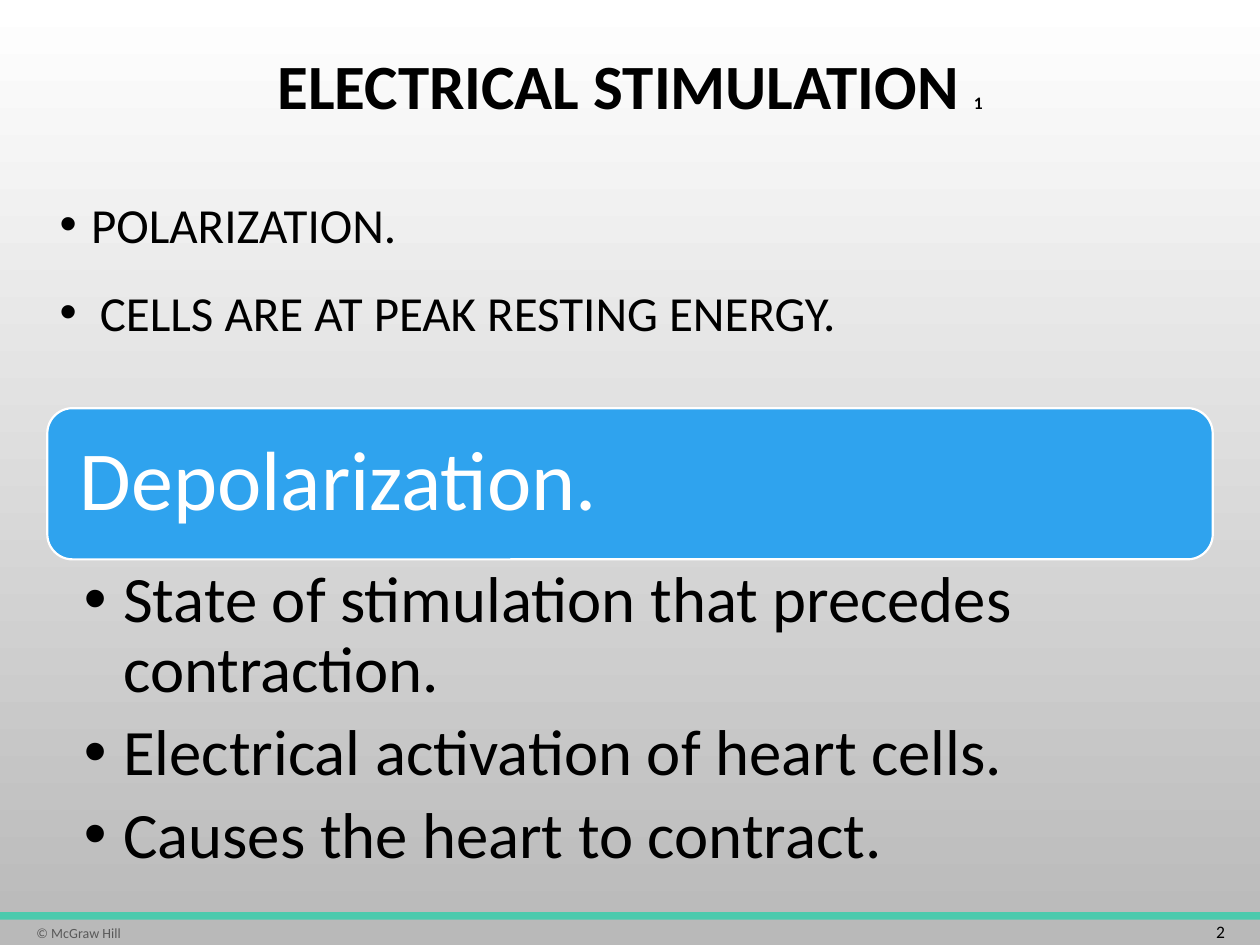
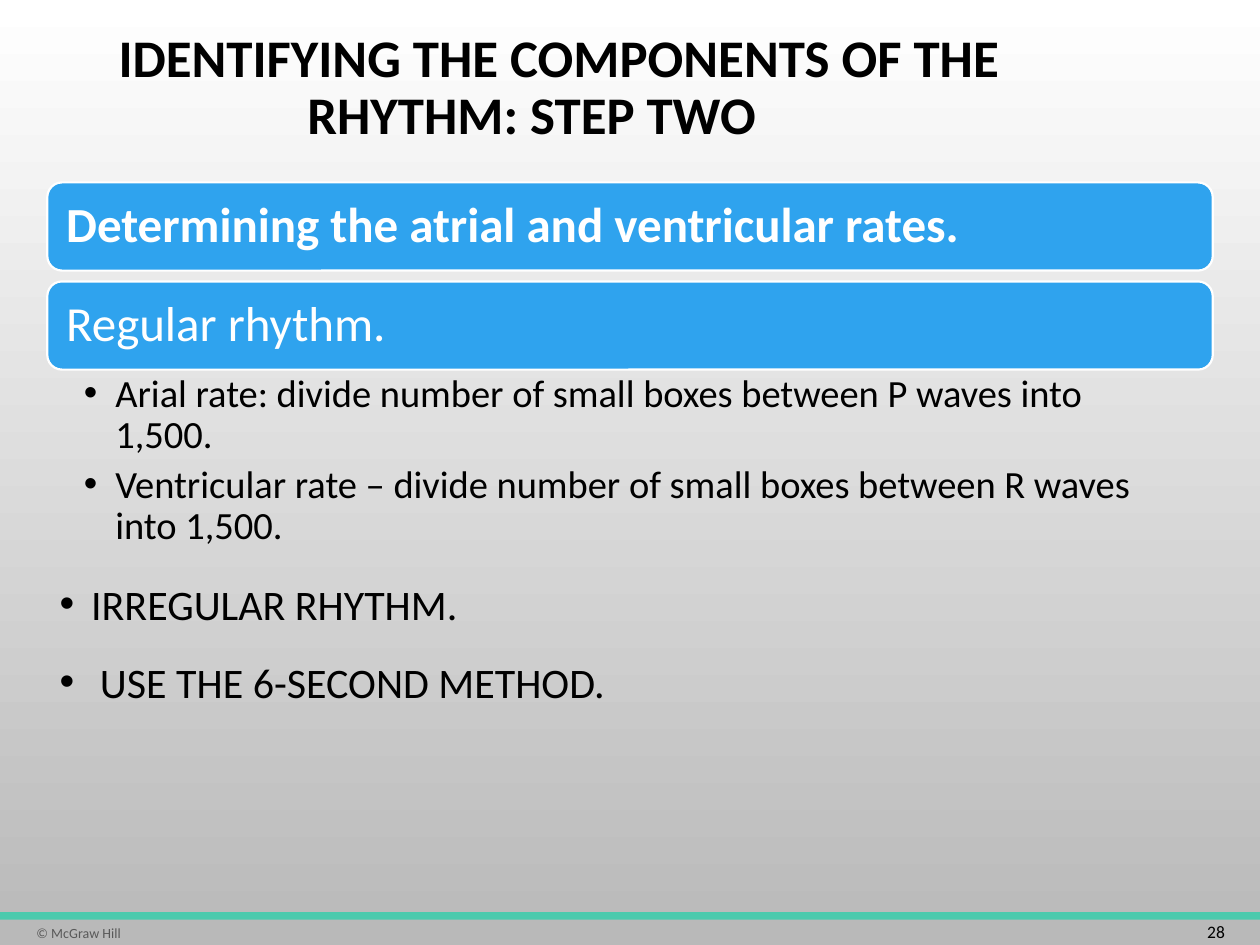
from lxml import etree
from pptx import Presentation
from pptx.dml.color import RGBColor
from pptx.enum.shapes import MSO_SHAPE
from pptx.enum.text import MSO_ANCHOR, PP_ALIGN
from pptx.oxml.ns import qn
from pptx.util import Pt

RECTANGLE = MSO_SHAPE.RECTANGLE
ROUNDED_RECTANGLE = MSO_SHAPE.ROUNDED_RECTANGLE
TOP, MIDDLE = MSO_ANCHOR.TOP, MSO_ANCHOR.MIDDLE
LEFT, CENTER, RIGHT = PP_ALIGN.LEFT, PP_ALIGN.CENTER, PP_ALIGN.RIGHT

COLORS = {
    "background_top": "FFFFFF",
    "background_bottom": "B9B9B9",
    "band": "4BCAAD",
    "panel": "2FA3EE",
    "panel_text": "FFFFFF",
    "text": "000000",
    "footer": "595959",
}
FONT = "Calibri"
MARGIN = 27
CONTENT_WIDTH = 666
DEFAULT_INSETS = (7.2, 3.6, 7.2, 3.6)


def write_text(shape, paragraphs, size, color="text", bold=False, align=LEFT,
               anchor=TOP, insets=DEFAULT_INSETS, line_spacing=1.0,
               space_before=0, space_after=0, indents=()):
    """Fill a shape with paragraphs, each a list of (text, size) runs or a string."""
    frame = shape.text_frame
    frame_format = {"word_wrap": True, "vertical_anchor": anchor}
    for side, inset in zip(("left", "top", "right", "bottom"), insets):
        frame_format[f"margin_{side}"] = Pt(inset)
    for name, value in frame_format.items():
        setattr(frame, name, value)

    for index, runs in enumerate(paragraphs):
        paragraph = frame.add_paragraph() if index else frame.paragraphs[0]
        paragraph_format = {
            "alignment": align,
            "line_spacing": line_spacing,
            "space_before": Pt(space_before if index else 0),
            "space_after": Pt(space_after),
        }
        for name, value in paragraph_format.items():
            setattr(paragraph, name, value)
        if indents:
            properties = paragraph._p.get_or_add_pPr()
            properties.set("marL", str(Pt(indents[index])))
            properties.set("indent", str(-Pt(indents[index])))
            etree.SubElement(properties, qn("a:buFont"), typeface="Arial")
            etree.SubElement(properties, qn("a:buChar"), char="•")
        if isinstance(runs, str):
            runs = [(runs, size)]
        for text, run_size in runs:
            run = paragraph.add_run()
            run.text = text
            run_format = {"name": FONT, "size": Pt(run_size), "bold": bold}
            for name, value in run_format.items():
                setattr(run.font, name, value)
            run.font.color.rgb = RGBColor.from_string(COLORS[color])


def add_filled_shape(slide, kind, box, fill, line=None):
    shape = slide.shapes.add_shape(kind, *map(Pt, box))
    shape.shadow.inherit = False
    shape.fill.solid()
    shape.fill.fore_color.rgb = RGBColor.from_string(COLORS[fill])
    if line:
        shape.line.color.rgb = RGBColor.from_string(COLORS[line])
        shape.line.width = Pt(1.25)
    else:
        shape.line.fill.background()
    return shape


SLIDES = [
    {
        "number": "2",
        "title": [("ELECTRICAL STIMULATION ", 36), ("1", 10)],
        "title_width": CONTENT_WIDTH,
        "body": ["POLARIZATION.", "CELLS ARE AT PEAK RESTING ENERGY."],
        "body_size": 28,
        "body_top": 100.8,
        "body_height": 111,
        "panels": [("Depolarization.", False)],
        "panel_size": 48,
        "panel_top": 233.25,
        "panel_height": 86.4,
        "panel_inset": 14.4,
        "details": [
            "State of stimulation that precedes contraction.",
            "Electrical activation of heart cells.",
            "Causes the heart to contract.",
        ],
        "detail_size": 37,
        "detail_top": 319,
        "detail_height": 172,
        "detail_insets": (20.9, 5, 26.6, 5),
        "detail_indent": 22.5,
    },
    {
        "number": "28",
        "title": [("IDENTIFYING THE COMPONENTS OF THE RHYTHM: STEP TWO\t", 30.2)],
        "title_width": 585.4,
        "body": ["IRREGULAR RHYTHM.", "USE THE 6-SECOND METHOD."],
        "body_size": 24,
        "body_top": 321,
        "body_height": 171,
        "panels": [
            ("Determining the atrial and ventricular rates.", True),
            ("Regular rhythm.", False),
        ],
        "panel_size": 28,
        "panel_top": 104.25,
        "panel_height": 50.4,
        "panel_inset": 8.4,
        "details": [
            "Arial rate: divide number of small boxes between P waves into 1,500.",
            "Ventricular rate – divide number of small boxes between R waves into 1,500.",
        ],
        "detail_size": 22,
        "detail_top": 211,
        "detail_height": 98,
        "detail_insets": (20.9, 2.8, 15.8, 2.8),
        "detail_indent": 18,
    },
]
PANEL_GAP = 6.2

presentation = Presentation()
presentation.slide_width, presentation.slide_height = Pt(720), Pt(540)
blank_layout = presentation.slide_layouts[6]

for content in SLIDES:
    slide = presentation.slides.add_slide(blank_layout)
    add_textbox = slide.shapes.add_textbox

    # Background gradient, running from top to bottom
    background = slide.background.fill
    background.gradient()
    background.gradient_angle = 270
    for stop, position, color in zip(background.gradient_stops, (0, 1),
                                     ("background_top", "background_bottom")):
        stop.position = position
        stop.color.rgb = RGBColor.from_string(COLORS[color])

    # Footer band, copyright line and slide number
    add_filled_shape(slide, RECTANGLE, (0, 521.3, 720, 4.3), "band")
    copyright_line = add_textbox(*map(Pt, (17.2, 525, 97, 16.5)))
    write_text(copyright_line, ["© McGraw Hill"], 8, "footer", anchor=MIDDLE,
               insets=(3.6,) * 4)
    slide_number = add_textbox(*map(Pt, (679, 525.6, 28, 13)))
    write_text(slide_number, [content["number"]], 10, align=RIGHT, anchor=MIDDLE)

    # Title
    title = add_textbox(*map(Pt, (MARGIN, 15, content["title_width"], 71.3)))
    write_text(title, [content["title"]], 36, bold=True, align=CENTER,
               anchor=MIDDLE, line_spacing=0.9)

    # Capitalised bullets
    body = add_textbox(*map(Pt, (MARGIN, content["body_top"], CONTENT_WIDTH,
                                 content["body_height"])))
    write_text(body, content["body"], content["body_size"], line_spacing=1.2,
               space_before=10, indents=(18, 23))

    # Blue heading panels
    for index, (heading, bold) in enumerate(content["panels"]):
        panel_top = content["panel_top"] + index * (content["panel_height"] + PANEL_GAP)
        panel = add_filled_shape(
            slide, ROUNDED_RECTANGLE,
            (MARGIN, panel_top, CONTENT_WIDTH, content["panel_height"]),
            "panel", "panel_text")
        write_text(panel, [heading], content["panel_size"], "panel_text", bold,
                   anchor=MIDDLE, insets=(content["panel_inset"],) * 4,
                   line_spacing=0.9)

    # Detail bullets under the last panel
    details = add_textbox(*map(Pt, (MARGIN, content["detail_top"], CONTENT_WIDTH,
                                    content["detail_height"])))
    write_text(details, content["details"], content["detail_size"],
               insets=content["detail_insets"], line_spacing=0.9,
               space_after=0.2 * content["detail_size"],
               indents=[content["detail_indent"]] * len(content["details"]))

presentation.save("out.pptx")
